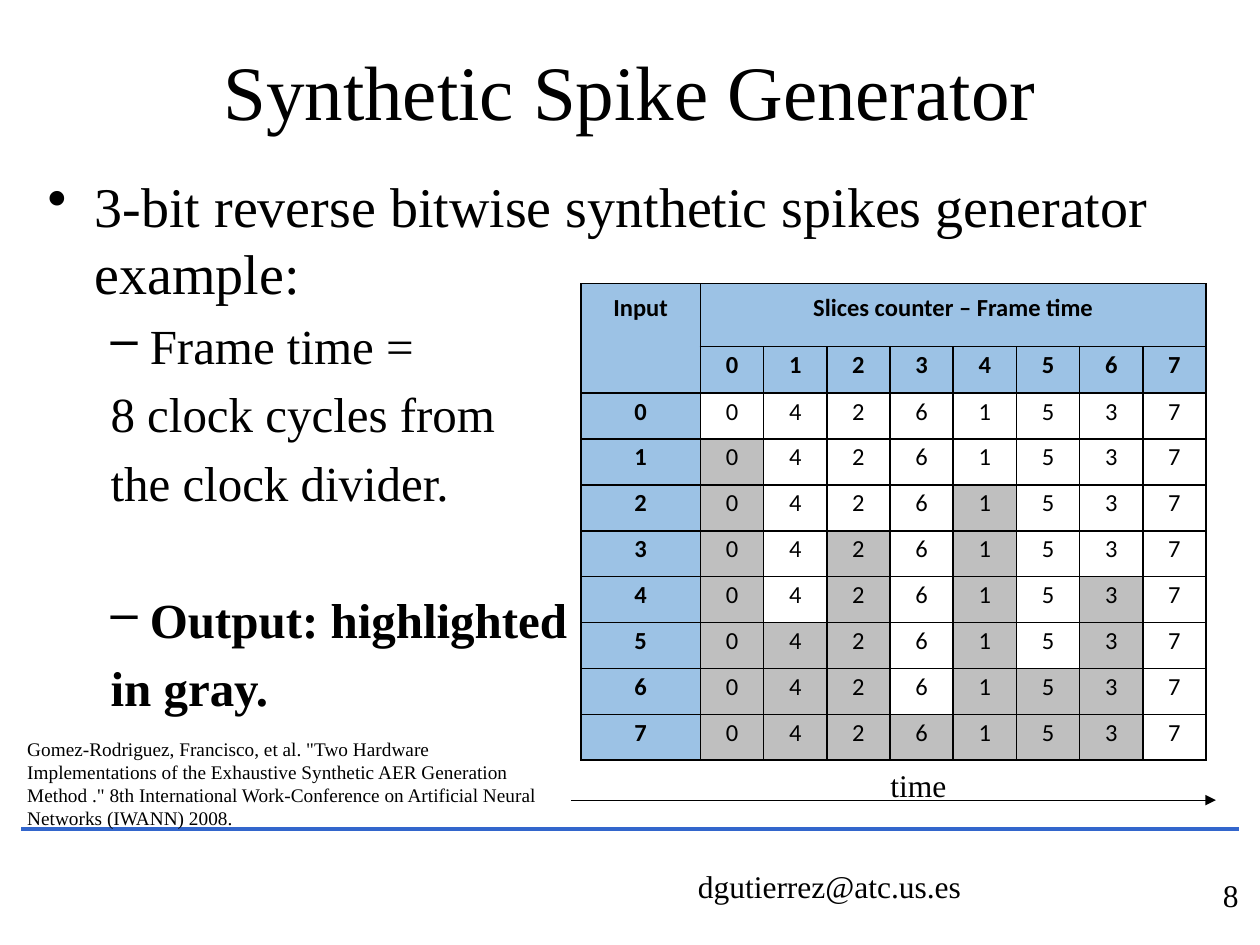
import dataclasses

import lxml.etree
import pptx
import pptx.dml.color
import pptx.enum.shapes
import pptx.enum.text
import pptx.oxml.ns
import pptx.util

Cm = pptx.util.Cm
Pt = pptx.util.Pt
qn = pptx.oxml.ns.qn
ALIGN = pptx.enum.text.PP_ALIGN
BITS = 3


def rgb(value):
    return pptx.dml.color.RGBColor.from_string(value)


def reverse_bits(n):
    return int(f"{n:0{BITS}b}"[::-1], 2)


@dataclasses.dataclass(frozen=True)
class Theme:
    serif: str = "Times New Roman"
    sans: str = "Calibri"
    ink: str = "000000"
    rule: str = "3366CC"
    header: str = "9CC2E5"
    spike: str = "BFBFBF"
    title: int = 44
    body: int = 32
    sub: int = 28
    label: int = 18
    cell: int = 14
    citation: int = 11


class Deck:
    def __init__(self, prs, theme):
        self.theme = theme
        self.s = prs.slides.add_slide(prs.slide_layouts[6])

    def run(self, p, text, size, font=None, bold=False):
        r = p.add_run()
        r.text = text
        r.font.size = Pt(size)
        r.font.name = font or self.theme.serif
        r.font.bold = bold
        r.font.color.rgb = rgb(self.theme.ink)

    def frame(self, x, y, w, h, wrap=True):
        sp = self.s.shapes.add_textbox(Cm(x), Cm(y), Cm(w), Cm(h))
        sp.text_frame.word_wrap = wrap
        return sp.text_frame

    def text(self, box, text, size, align=ALIGN.LEFT, wrap=True, inset=True):
        tf = self.frame(*box, wrap=wrap)
        if not inset:
            tf.margin_left = tf.margin_right = tf.margin_top = tf.margin_bottom = 0
        p = tf.paragraphs[0]
        p.alignment = align
        self.run(p, text, size)

    def outline(self, box, items):
        """Items are (text, size, level, bullet, left, hanging, space before, bold)."""
        tf = self.frame(*box)
        for i, (text, size, level, bullet, left, hang, before, bold) in enumerate(items):
            p = tf.add_paragraph() if i else tf.paragraphs[0]
            p.level = level
            pPr = p._p.get_or_add_pPr()
            pPr.set("marL", str(Cm(left)))
            pPr.set("indent", str(-Cm(hang)))
            if bullet:
                lxml.etree.SubElement(pPr, qn("a:buChar"), char=bullet)
            else:
                lxml.etree.SubElement(pPr, qn("a:buNone"))
            if before:
                p.space_before = Pt(before)
            self.run(p, text, size, bold=bold)

    def line(self, x1, x2, y, color, width, arrow=False):
        c = self.s.shapes.add_connector(
            pptx.enum.shapes.MSO_CONNECTOR.STRAIGHT, Cm(x1), Cm(y), Cm(x2), Cm(y))
        c.line.color.rgb = rgb(color)
        c.line.width = Pt(width)
        if arrow:
            lxml.etree.SubElement(c.line._get_or_add_ln(), qn("a:tailEnd"), type="triangle")
        lxml.etree.SubElement(c._element.spPr, qn("a:effectLst"))

    def table(self, x, y, widths, heights):
        t = self.s.shapes.add_table(len(heights), len(widths), Cm(x), Cm(y),
                                    Cm(sum(widths)), Cm(sum(heights))).table
        t.first_row = t.horz_banding = False
        for col, w in zip(t.columns, widths):
            col.width = Cm(w)
        for row, h in zip(t.rows, heights):
            row.height = Cm(h)
        return t

    def cell(self, cell, text="", fill=None, bold=False, insets=(0.25, 0.03, 0.25, 0)):
        (cell.margin_left, cell.margin_top,
         cell.margin_right, cell.margin_bottom) = map(Cm, insets)
        if fill:
            cell.fill.solid()
            cell.fill.fore_color.rgb = rgb(fill)
        else:
            cell.fill.background()
        self.borders(cell)
        if text:
            p = cell.text_frame.paragraphs[0]
            p.alignment = ALIGN.CENTER
            p.line_spacing = 1.07
            p.space_after = Pt(8)
            self.run(p, text, self.theme.cell, self.theme.sans, bold)

    def borders(self, cell):
        tcPr = cell._tc.get_or_add_tcPr()
        for i, side in enumerate(("a:lnL", "a:lnR", "a:lnT", "a:lnB")):
            ln = lxml.etree.Element(qn(side), w=str(Pt(1)))
            fill = lxml.etree.SubElement(ln, qn("a:solidFill"))
            lxml.etree.SubElement(fill, qn("a:srgbClr"), val=self.theme.ink)
            tcPr.insert(i, ln)


def spike_table(deck):
    """A slice fires when its bit-reversed counter is below the input."""
    th = deck.theme
    n = 2 ** BITS
    t = deck.table(11.71, 5.72, [2.41] + [1.275] * n, [1.27] + [0.925] * (n + 1))
    titles = {0: "Input", 1: "Slices counter – Frame time"}
    for col in range(n + 1):
        deck.cell(t.cell(0, col), titles.get(col, ""), th.header, True,
                  (0.33, 0.15, 0.33, 0.15))
        deck.cell(t.cell(1, col), str(col - 1) if col else "", th.header, True)
    t.cell(0, 0).merge(t.cell(1, 0))
    t.cell(0, 1).merge(t.cell(0, n))
    for level in range(n):
        deck.cell(t.cell(level + 2, 0), str(level), th.header, True)
        for slot in range(n):
            value = reverse_bits(slot)
            deck.cell(t.cell(level + 2, slot + 1), str(value),
                      th.spike if value < level else None)


def main():
    prs = pptx.Presentation()
    prs.slide_width, prs.slide_height = Cm(25.4), Cm(19.05)
    th = Theme()
    deck = Deck(prs, th)

    deck.text((23.5, 17.65, 1.47, 0.76), "8", th.label, ALIGN.RIGHT, inset=False)
    deck.line(0.43, 24.97, 16.71, th.rule, 2.25)
    deck.text((13.82, 17.35, 5.87, 1.02), "dgutierrez@atc.us.es", th.label, wrap=False)
    deck.text((1.27, 0.76, 22.86, 3.18), "Synthetic Spike Generator", th.title, ALIGN.CENTER)

    gap, section_gap = 5.5, 44.7
    dash = (th.sub, 1, "–", 2.06, 0.79)
    plain = (th.sub, 1, None, 1.27, 0)
    deck.outline((0.71, 3.33, 23.19, 3.18), [
        ("3-bit reverse bitwise synthetic spikes generator example:",
         th.body, 0, "•", 0.95, 0.95, 0, False),
        ("Frame time =", *dash, gap, False),
        ("8 clock cycles from", *plain, gap, False),
        ("the clock divider.", *plain, gap, False),
        ("Output: highlighted", *dash, section_gap, True),
        ("in gray.", *plain, gap, True),
    ])

    spike_table(deck)
    deck.line(11.51, 24.51, 16.13, th.ink, 0.75, arrow=True)
    deck.text((17.7, 15.32, 3.2, 1.02), "time", th.label)
    deck.text((0.3, 14.73, 10.8, 2.13),
              'Gomez-Rodriguez, Francisco, et al. "Two Hardware Implementations of the '
              'Exhaustive Synthetic AER Generation Method ." 8th International '
              'Work-Conference on Artificial Neural Networks (IWANN) 2008.', th.citation)
    prs.save("out.pptx")


if __name__ == "__main__":
    main()
